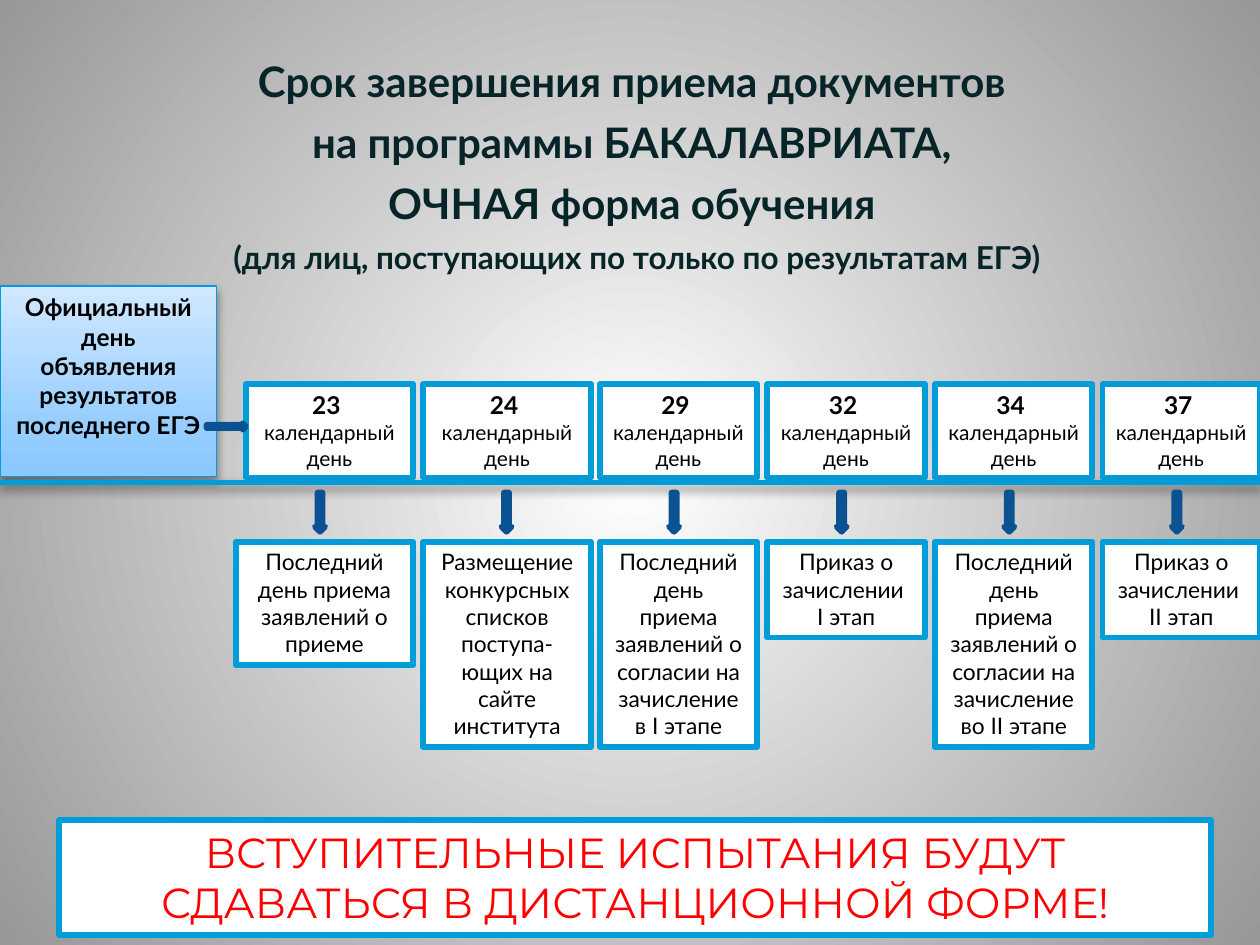
import pptx
import pptx.dml.color
import pptx.enum.shapes
import pptx.enum.text
import pptx.oxml
import pptx.oxml.ns
import pptx.util

Inches = pptx.util.Inches
Pt = pptx.util.Pt
SHAPES = pptx.enum.shapes.MSO_SHAPE
NAMESPACE = pptx.oxml.ns.nsdecls("a")
BLUE = "009DD9"


def paint(shape, fill, line, width=3.35):
    shape.shadow.inherit = False
    shape.fill.solid()
    shape.fill.fore_color.rgb = pptx.dml.color.RGBColor.from_string(fill)
    shape.line.color.rgb = pptx.dml.color.RGBColor.from_string(line)
    shape.line.width = Pt(width)


def write(shape, text, size=13, font="Lato", color="000000", bold=False, after=0):
    frame = shape.text_frame
    frame.word_wrap = True
    frame.auto_size = pptx.enum.text.MSO_AUTO_SIZE.NONE
    frame.vertical_anchor = pptx.enum.text.MSO_ANCHOR.TOP
    paragraph = frame.paragraphs[0] if not frame.text else frame.add_paragraph()
    paragraph.alignment = pptx.enum.text.PP_ALIGN.CENTER
    paragraph.space_after = Pt(after)
    run = paragraph.add_run()
    run.text = text
    run.font.size = Pt(size)
    run.font.name = font
    run.font.bold = bold
    run.font.color.rgb = pptx.dml.color.RGBColor.from_string(color)


presentation = pptx.Presentation()
presentation.slide_width = Inches(10)
presentation.slide_height = Inches(7.5)
slide = presentation.slides.add_slide(presentation.slide_layouts[5])
shapes = slide.shapes

title = shapes.title
title.left, title.top, title.width, title.height = map(Inches, (0, 0.39, 9.69, 2.29))
for text, size in [
    ("Срок завершения приема документов ", 24),
    ("на программы БАКАЛАВРИАТА, ", 24),
    ("ОЧНАЯ форма обучения ", 24),
    ("(для лиц, поступающих по только по результатам ЕГЭ)", 18),
]:
    write(title, text, size=size, color="072428", bold=True, after=6)
title.text_frame.paragraphs[0]._p.get_or_add_pPr().set("marL", str(Inches(0.42)))

banner = shapes.add_shape(SHAPES.RECTANGLE, *map(Inches, (0.47, 6.51, 9.14, 0.91)))
paint(banner, "FFFFFF", BLUE)
write(
    banner,
    "ВСТУПИТЕЛЬНЫЕ ИСПЫТАНИЯ БУДУТ СДАВАТЬСЯ В ДИСТАНЦИОННОЙ ФОРМЕ!",
    size=24,
    font="Montserrat",
    color="FF0000",
)

start = shapes.add_shape(SHAPES.RECTANGLE, *map(Inches, (0, 2.27, 1.72, 1.51)))
paint(start, "8AC8FF", BLUE, width=0.75)
write(start, "Официальный день объявления результатов последнего ЕГЭ", size=14, bold=True)

column_lefts = [1.95, 3.36] + [8.75 - 1.33 * back for back in (3, 2, 1, 0)]
column_widths = [1.33] * 2 + [1.25] * 4
arrow_lefts = [2.5] + [9.3 - 1.33 * back for back in (4, 3, 2, 1, 0)]
stages = [
    ("23 ", 0.98, ["Последний день приема заявлений о приеме"]),
    ("24 ", 1.63, ["Размещение конкурсных списков поступа-ющих на сайте института"]),
    ("29 ", 1.63, ["Последний день приема заявлений о согласии на зачисление в I этапе"]),
    ("32 ", 0.76, ["Приказ о зачислении ", "I этап"]),
    ("34 ", 1.63, ["Последний день приема заявлений о согласии на зачисление во II этапе"]),
    ("37 ", 0.76, ["Приказ о зачислении ", "II этап"]),
]
for (day, height, lines), left, width in zip(stages, column_lefts, column_widths):
    day_box = shapes.add_shape(SHAPES.RECTANGLE, *map(Inches, (left, 3.05, width, 0.74)))
    paint(day_box, "FFFFFF", BLUE)
    write(day_box, day, size=14, bold=True)
    write(day_box, "календарный день", size=12)

    overhang = 0.08 if day == "23 " else 0
    event_box = shapes.add_shape(
        SHAPES.RECTANGLE, *map(Inches, (left - overhang, 4.3, width + overhang, height))
    )
    paint(event_box, "FFFFFF", BLUE)
    for line in lines:
        write(event_box, line)

timeline = shapes.add_connector(
    pptx.enum.shapes.MSO_CONNECTOR.STRAIGHT, 0, Inches(3.83), Inches(10), Inches(3.83)
)
timeline.line.color.rgb = pptx.dml.color.RGBColor.from_string(BLUE)
timeline.line.width = Pt(3.35)

arrows = [(SHAPES.RIGHT_ARROW, 1.64, 3.36, 0.31, 0.05)]
arrows += [(SHAPES.DOWN_ARROW, left, 3.91, 0.08, 0.31) for left in arrow_lefts]
for kind, *box in arrows:
    arrow = shapes.add_shape(kind, *map(Inches, box))
    paint(arrow, "0F6FC6", "0B5292")

for shape in (start, timeline):
    properties = shape._element.spPr
    for effects in properties.xpath("a:effectLst"):
        properties.remove(effects)
    properties.append(pptx.oxml.parse_xml(
        f'<a:effectLst {NAMESPACE}><a:outerShdw blurRad="{Pt(5.2)}" dist="{Pt(3)}" '
        'dir="5400000" rotWithShape="0"><a:srgbClr val="000000"><a:alpha val="40000"/>'
        "</a:srgbClr></a:outerShdw></a:effectLst>"
    ))

slide.background.fill.solid()
radial = (
    '<a:path path="circle"><a:fillToRect l="50000" t="50000" r="50000" b="50000"/></a:path>'
)
upward = '<a:lin ang="16200000" scaled="0"/>'
for owner, query, stops, direction in [
    (slide._element, "p:cSld/p:bg/p:bgPr/a:solidFill", [(0, "FFFFFF"), (100, "979797")], radial),
    (start._element, "p:spPr/a:solidFill", [(0, "8AC8FF"), (25, "95CDFF"), (100, "D1E8FF")], upward),
]:
    solid = owner.xpath(query)[0]
    stop_list = "".join(
        f'<a:gs pos="{position * 1000}"><a:srgbClr val="{color}"/></a:gs>'
        for position, color in stops
    )
    gradient = pptx.oxml.parse_xml(
        f'<a:gradFill {NAMESPACE} rotWithShape="1"><a:gsLst>{stop_list}</a:gsLst>'
        f"{direction}</a:gradFill>"
    )
    solid.getparent().replace(solid, gradient)

presentation.save("out.pptx")
